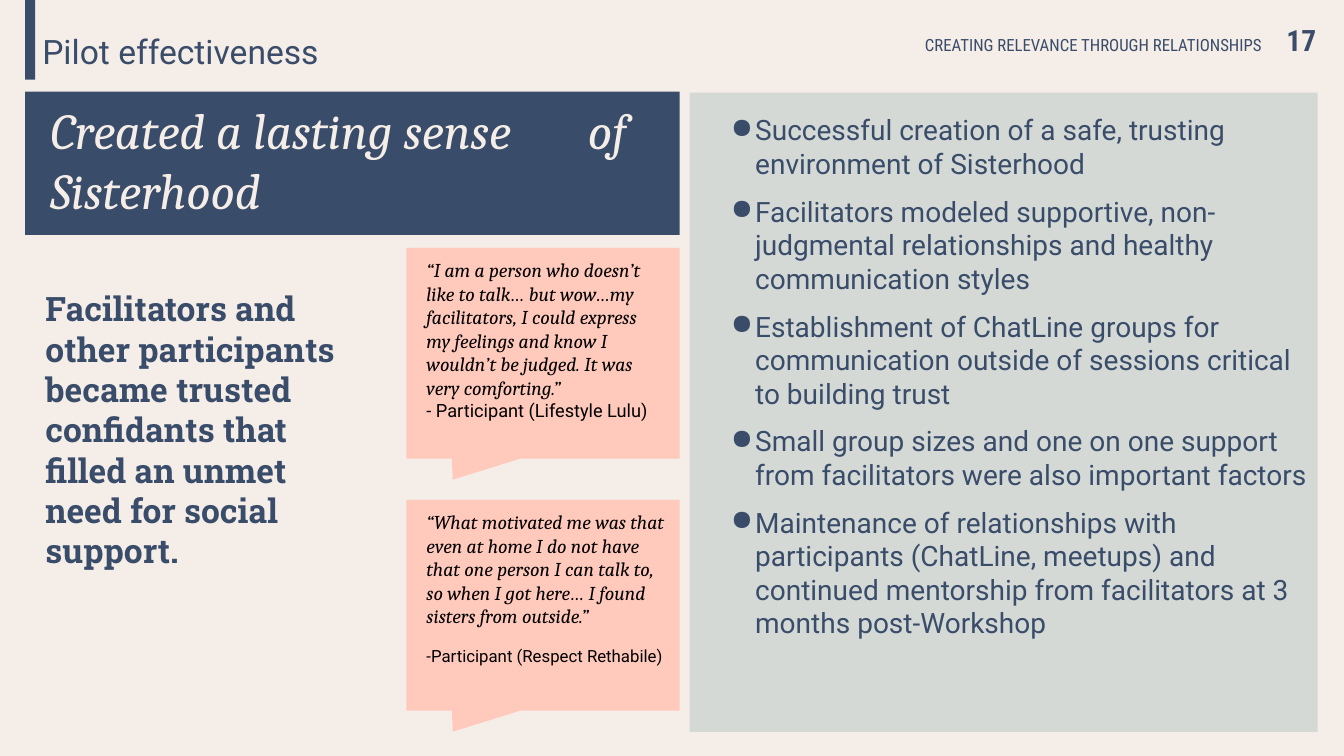
from dataclasses import dataclass

from lxml.etree import SubElement
from pptx import Presentation
from pptx.dml.color import RGBColor
from pptx.enum.shapes import MSO_SHAPE as Preset
from pptx.enum.text import MSO_ANCHOR as Anchor
from pptx.oxml.ns import qn
from pptx.util import Inches, Pt

COLORS = {
    "cream": "F5EDE7",
    "navy": "394C69",
    "sage": "D4D9D6",
    "peach": "FFC9BC",
    "black": "000000",
}


@dataclass(frozen=True)
class Box:
    left: float
    top: float
    width: float
    height: float

    def lengths(self):
        return [Inches(value) for value in (self.left, self.top, self.width, self.height)]


@dataclass(frozen=True)
class Panel:
    box: Box
    color: str


@dataclass(frozen=True)
class Quote:
    top: float
    right_inset: float
    text: str
    speaker: str
    speaker_size: int
    speaker_gap: int


HEADER_BOX = Box(6.84, 0.18, 6.31, 0.43)
PANELS = [
    Panel(Box(6.84, 0.92, 6.23, 6.34), "sage"),
    Panel(Box(0.25, 0.91, 6.49, 1.42), "navy"),
    Panel(Box(0.25, 0, 0.1, 0.79), "navy"),
]
QUOTES = [
    Quote(4.96, 0.1,
          "“What motivated me was that even at home I do not have that one person "
          "I can talk to, so when I got here… I found sisters from outside.”",
          "-Participant (Respect Rethabile)", 12, 13),
    Quote(2.46, 0.2,
          "“I am a person who doesn’t like to talk… but wow…my facilitators, I could "
          "express my feelings and know I wouldn’t be judged. It was very comforting.”",
          "- Participant (Lifestyle Lulu)", 13, 0),
]
FINDINGS = [
    "Successful creation of a safe, trusting environment of Sisterhood",
    "Facilitators modeled supportive, non-judgmental relationships and healthy "
    "communication styles",
    "Establishment of ChatLine groups for communication outside of sessions critical "
    "to building trust",
    "Small group sizes and one on one support from facilitators were also important factors",
    "Maintenance of relationships with participants (ChatLine, meetups) and continued "
    "mentorship from facilitators at 3 months post-Workshop",
]


def rgb(name: str) -> RGBColor:
    return RGBColor.from_string(COLORS[name])


def add_filled_shape(slide, preset, box: Box, color: str):
    shape = slide.shapes.add_shape(preset, *box.lengths())
    shape.shadow.inherit = False
    shape.fill.solid()
    shape.fill.fore_color.rgb = rgb(color)
    shape.line.fill.background()
    return shape


def set_frame(shape, insets: tuple, anchor=Anchor.TOP):
    frame = shape.text_frame
    frame.word_wrap = True
    frame.vertical_anchor = anchor
    frame.margin_left, frame.margin_top, frame.margin_right, frame.margin_bottom = map(
        Inches, insets)
    return frame


def add_text_frame(slide, box: Box, insets: tuple, anchor=Anchor.TOP):
    return set_frame(slide.shapes.add_textbox(*box.lengths()), insets, anchor)


def add_run(paragraph, text: str, *, size: float, font: str, color: str = "navy",
            bold: bool = False, italic: bool = False) -> None:
    run = paragraph.add_run()
    run.text = text
    run.font.size = Pt(size)
    run.font.name = font
    run.font.color.rgb = rgb(color)
    run.font.bold = bold
    run.font.italic = italic


def add_tabs(paragraph, *stops: tuple) -> None:
    tabs = SubElement(paragraph._p.get_or_add_pPr(), qn("a:tabLst"))
    for position, alignment in stops:
        SubElement(tabs, qn("a:tab"), pos=str(Inches(position)), algn=alignment)


def add_bullet(paragraph) -> None:
    properties = paragraph._p.get_or_add_pPr()
    properties.set("marL", str(Inches(0.35)))
    properties.set("indent", str(Inches(-0.24)))
    bullet_color = SubElement(properties, qn("a:buClr"))
    SubElement(bullet_color, qn("a:srgbClr"), val=COLORS["navy"])
    SubElement(properties, qn("a:buChar"), char="●")


def add_headings(slide) -> None:
    frame = add_text_frame(slide, Box(0.42, 0.31, 6.33, 0.61), (0, 0, 0, 0))
    add_run(frame.paragraphs[0], "Pilot effectiveness", size=24, font="Roboto")

    frame = add_text_frame(slide, Box(0.25, 0.88, 6.72, 1.94), (0.25, 0.1, 0, 0))
    title = frame.paragraphs[0]
    add_tabs(title, (5.33, "l"))
    add_run(title, "Created a lasting sense\tof Sisterhood",
            size=36, font="Cambria", color="cream", italic=True)

    frame = add_text_frame(slide, Box(0.25, 2.76, 3.2, 4.49), (0.2, 0.1, 0, 0))
    add_run(frame.paragraphs[0],
            "Facilitators and other participants became trusted confidants that "
            "filled an unmet need for social support.",
            size=24, font="Roboto Slab", bold=True)

    frame = add_text_frame(slide, HEADER_BOX, (0.1, 0.1, 0, 0.1), Anchor.MIDDLE)
    header = frame.paragraphs[0]
    add_tabs(header, (5.58, "r"), (5.82, "l"))
    add_run(header, "\tCREATING RELEVANCE THROUGH RELATIONSHIPS\t",
            size=12, font="Roboto Condensed")
    add_run(header, "17", size=21, font="Roboto Condensed", bold=True)


def add_findings(slide) -> None:
    frame = add_text_frame(slide, Box(6.84, 0.92, 6.23, 3.81), (0.3, 0.2, 0, 0))
    for index, finding in enumerate(FINDINGS):
        paragraph = frame.add_paragraph() if index else frame.paragraphs[0]
        add_bullet(paragraph)
        if index:
            paragraph.space_before = Pt(10)
        add_run(paragraph, finding, size=20, font="Roboto")


def add_quote(slide, quote: Quote) -> None:
    callout = add_filled_shape(
        slide, Preset.RECTANGULAR_CALLOUT, Box(4.03, quote.top, 2.71, 2.09), "peach")
    callout.adjustments[0] = -0.33
    callout.adjustments[1] = 0.6
    frame = set_frame(callout, (0.2, 0.1, quote.right_inset, 0))
    words = frame.paragraphs[0]
    add_run(words, quote.text, size=14, font="Cambria", color="black", italic=True)
    speaker = frame.add_paragraph()
    speaker.space_before = Pt(quote.speaker_gap)
    add_run(speaker, quote.speaker, size=quote.speaker_size, font="Roboto", color="black")
    for paragraph in frame.paragraphs:
        paragraph._p.get_or_add_pPr().set("algn", "l")


def main() -> None:
    presentation = Presentation()
    presentation.slide_width = Inches(13.33)
    presentation.slide_height = Inches(7.5)
    slide = presentation.slides.add_slide(presentation.slide_layouts[6])
    slide.background.fill.solid()
    slide.background.fill.fore_color.rgb = rgb("cream")
    for panel in PANELS:
        add_filled_shape(slide, Preset.RECTANGLE, panel.box, panel.color)
    add_headings(slide)
    add_findings(slide)
    for quote in QUOTES:
        add_quote(slide, quote)
    presentation.save("out.pptx")


if __name__ == "__main__":
    main()
